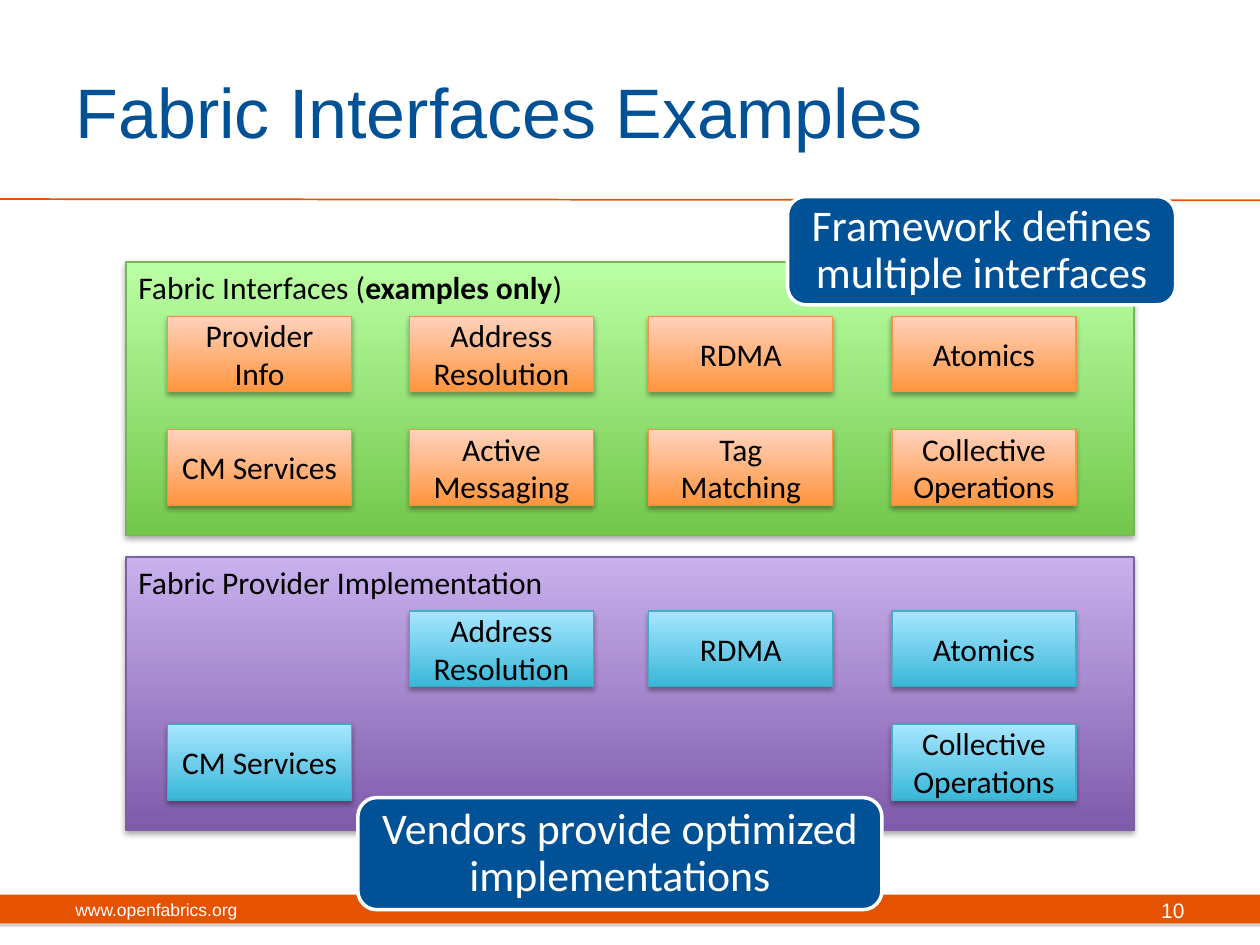
from dataclasses import dataclass
from lxml import etree
from pptx import Presentation
from pptx.dml.color import RGBColor
from pptx.enum import shapes as sh, text as tx
from pptx.oxml import ns
from pptx.util import Inches, Pt


@dataclass(frozen=True)
class Theme:
    head: str = "Arial"
    body: str = "Calibri"
    blue: str = "005195"
    rust: str = "E55302"
    white: str = "FFFFFF"
    black: str = "000000"
    gray: str = "808080"
    # Each set: bottom, top, outline
    green: tuple = ("73C74B", "BAFFA4", "75B755")
    violet: tuple = ("7F5BAB", "C8B0ED", "7D60A0")
    orange: tuple = ("FF953E", "FFD2BD", "F69240")
    aqua: tuple = ("39B7D8", "A7E6FF", "46AAC5")
    title: int = 40
    note: int = 25
    label: int = 18
    page: int = 12
    foot: int = 10


T = Theme()
COLS = (1.33, 3.25, 5.15, 7.08)
ROWS = (0.43, 1.33)  # from the panel top


def rgb(code):
    return RGBColor.from_string(code)


def box(area):
    return [Inches(n) for n in area]


def write(shape, words, size=T.label, font=T.body, color=T.black, align="LEFT",
          anchor="MIDDLE", space=None, inset=None):
    """Fill a shape; words is a string or a list of (text, bold) runs."""
    frame = shape.text_frame
    frame.word_wrap = True
    frame.auto_size = tx.MSO_AUTO_SIZE.NONE
    frame.vertical_anchor = getattr(tx.MSO_ANCHOR, anchor)
    if inset is not None:
        frame.margin_left = frame.margin_right = Inches(inset)
        frame.margin_top = frame.margin_bottom = Inches(inset)
    if isinstance(words, str):
        lines = [[(line, False)] for line in words.split("\n")]
    else:
        lines = [words]
    for i, runs in enumerate(lines):
        par = frame.add_paragraph() if i else frame.paragraphs[0]
        par.alignment = getattr(tx.PP_ALIGN, align)
        if space:
            par.line_spacing = space
        for part, bold in runs:
            run = par.add_run()
            run.text = part
            run.font.size, run.font.name, run.font.bold = Pt(size), font, bold
            run.font.color.rgb = rgb(color)


def shade(shape, color=T.black, blur=3.1):
    """Add a soft shadow straight below the shape."""
    shape.shadow.inherit = False
    fx = shape._element.spPr.find(ns.qn("a:effectLst"))
    cast = etree.SubElement(fx, ns.qn("a:outerShdw"), blurRad=str(Pt(blur)),
                            dist=str(Pt(1.8)), dir="5400000", rotWithShape="0")
    tone = etree.SubElement(cast, ns.qn("a:srgbClr"), val=color)
    etree.SubElement(tone, ns.qn("a:alpha"), val="35000")


def block(slide, area, words, tones, **form):
    """Draw a gradient rectangle with a label."""
    rect = slide.shapes.add_shape(sh.MSO_SHAPE.RECTANGLE, *box(area))
    rect.fill.gradient()
    rect.fill.gradient_angle = 90
    for stop, tone in zip(rect.fill.gradient_stops, tones):
        stop.color.rgb = rgb(tone)
    rect.line.color.rgb = rgb(tones[2])
    rect.line.width = Pt(0.75)
    shade(rect)
    write(rect, words, **form)


def panel(slide, top, words, tones, tile, grid):
    """Draw a panel and its grid of tiles; None leaves a gap."""
    block(slide, (1, top, 8, 2.17), words, tones, anchor="TOP")
    for y, names in zip(ROWS, grid):
        for x, name in zip(COLS, names):
            if name:
                block(slide, (x, top + y, 1.46, 0.6), name, tile, align="CENTER")


def note(slide, area, words):
    """Draw a rounded callout."""
    bub = slide.shapes.add_shape(sh.MSO_SHAPE.ROUNDED_RECTANGLE, *box(area))
    bub.adjustments[0] = 0.17
    bub.fill.solid()
    bub.fill.fore_color.rgb = rgb(T.blue)
    bub.line.color.rgb = rgb(T.white)
    bub.line.width = Pt(2)
    bub.shadow.inherit = False
    write(bub, words, size=T.note, color=T.white, align="CENTER",
          space=0.9, inset=0.12)


def label(slide, area, words, **form):
    write(slide.shapes.add_textbox(*box(area)), words, font=T.head,
          color=T.white, **form)


def frame(slide):
    """Draw the title, rule and footer."""
    head = slide.shapes.title
    head.left, head.top, head.width, head.height = box((0.5, 0.25, 8.17, 1.25))
    write(head, "Fabric Interfaces Examples", size=T.title, font=T.head,
          color=T.blue)

    bar = slide.shapes.add_shape(sh.MSO_SHAPE.RECTANGLE, *box((0, 7.1, 10, 0.23)))
    bar.fill.solid()
    bar.fill.fore_color.rgb = rgb(T.rust)
    bar.line.fill.background()
    shade(bar, T.gray, 0)

    rule = slide.shapes.add_connector(sh.MSO_CONNECTOR.STRAIGHT,
                                      *box((0, 1.58, 10, 1.59)))
    rule.line.color.rgb = rgb(T.rust)
    rule.line.width = Pt(1)
    etree.SubElement(rule._element.spPr, ns.qn("a:effectLst"))

    label(slide, (0.5, 7.02, 3.17, 0.4), "www.openfabrics.org", size=T.foot)
    label(slide, (7.17, 7.02, 2.33, 0.4), "10", size=T.page, align="RIGHT")


def main():
    deck = Presentation()
    deck.slide_width, deck.slide_height = Inches(10), Inches(7.5)
    slide = deck.slides.add_slide(deck.slide_layouts[5])
    frame(slide)

    # Interfaces above, provider coverage below
    panel(slide, 2.08,
          [("Fabric Interfaces (", False), ("examples only", True), (")", False)],
          T.green, T.orange,
          [("Provider\nInfo", "Address Resolution", "RDMA", "Atomics"),
           ("CM Services", "Active Messaging", "Tag Matching",
            "Collective Operations")])
    panel(slide, 4.42, "Fabric Provider Implementation", T.violet, T.aqua,
          [(None, "Address Resolution", "RDMA", "Atomics"),
           ("CM Services", None, None, "Collective Operations")])

    # Callouts
    note(slide, (6.25, 1.56, 3.08, 0.86), "Framework defines multiple interfaces")
    note(slide, (2.84, 6.33, 4.16, 0.89),
         "Vendors provide optimized implementations")
    deck.save("out.pptx")


if __name__ == "__main__":
    main()
